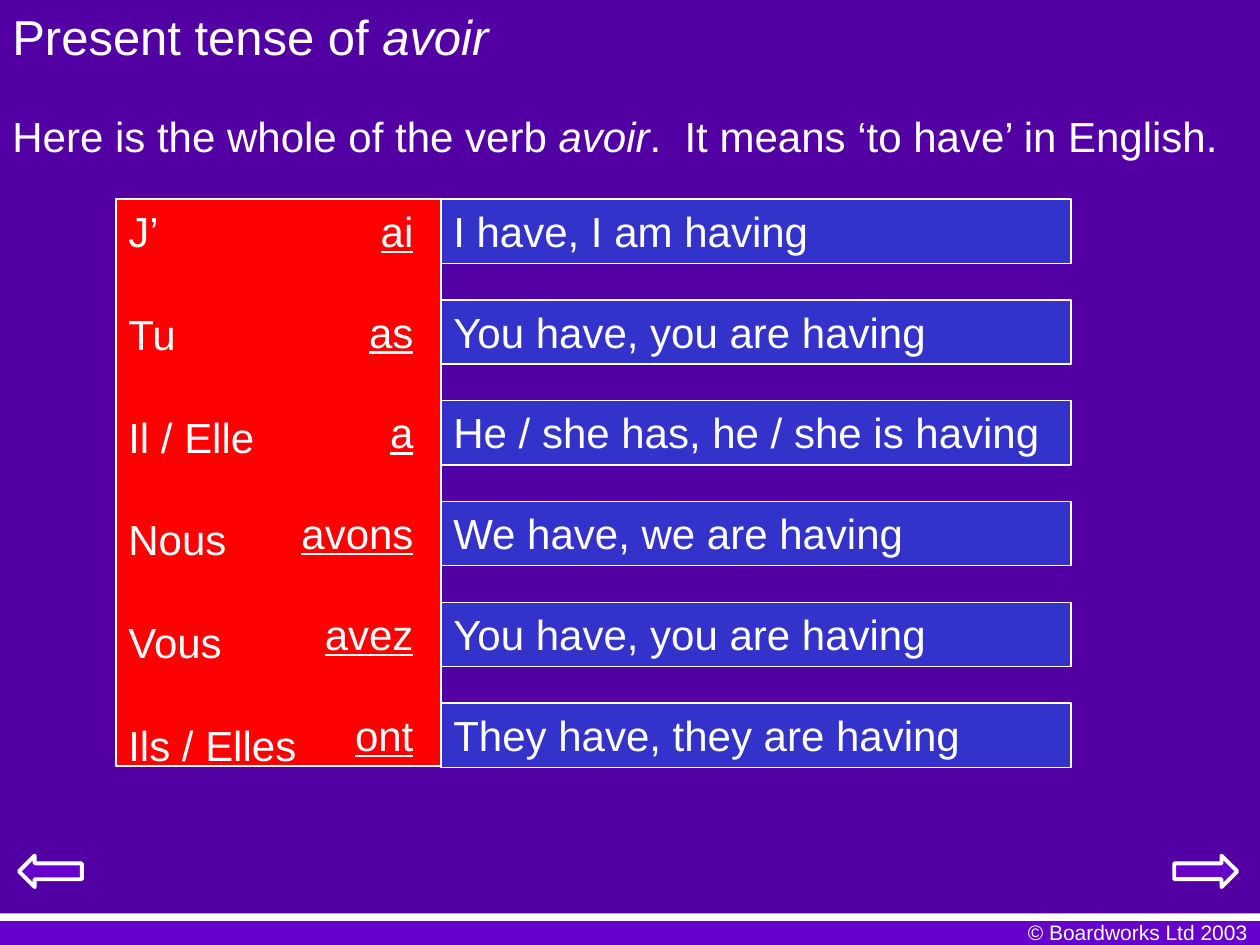
import pptx
import pptx.util
import pptx.dml.color
import pptx.enum.shapes
import pptx.enum.text

COLORS = {
    "background": "000066",
    "panel": "5200A4",
    "accent": "6600CC",
    "pronoun": "FF0000",
    "meaning": "3333CC",
    "white": "FFFFFF",
}
FONT = "Arial"
WIDTH, HEIGHT = 10, 7.5

# Grid of the verb table, in inches
TABLE_TOP, ROW_STEP, ROW_HEIGHT = 1.58, 0.8, 0.5
PRONOUN_LEFT, MEANING_LEFT, MEANING_RIGHT = 0.92, 3.5, 8.5
VERB_RIGHT = 3.38
TEXT_SIZE = 24
PRONOUN_GAP = 30  # points between pronoun lines, so they follow ROW_STEP

# Pronoun, verb form, width of the verb box, meaning
CONJUGATION = [
    ("J’", "ai", 0.46, "I have, I am having"),
    ("Tu", "as", 0.55, "You have, you are having"),
    ("Il / Elle", "a", 0.39, "He / she has, he / she is having"),
    ("Nous", "avons", 1.09, "We have, we are having"),
    ("Vous", "avez", 0.91, "You have, you are having"),
    ("Ils / Elles", "ont", 0.66, "They have, they are having"),
]

SHAPES = pptx.enum.shapes.MSO_SHAPE
ALIGN = pptx.enum.text.PP_ALIGN


def color(name):
    return pptx.dml.color.RGBColor.from_string(COLORS[name])


def inches(*lengths):
    return [pptx.util.Inches(length) for length in lengths]


def write_text(box, lines, size=TEXT_SIZE, align=ALIGN.LEFT, underline=None,
               gap=0, wrap=True):
    """Fill a box; each line is a list of (text, italic) spans."""
    frame = box.text_frame
    frame.word_wrap = wrap
    frame.vertical_anchor = pptx.enum.text.MSO_ANCHOR.TOP
    for index, spans in enumerate(lines):
        para = frame.add_paragraph() if index else frame.paragraphs[0]
        para.alignment = align
        if index and gap:
            para.space_before = pptx.util.Pt(gap)
        for text, italic in spans:
            span = para.add_run()
            span.text = text
            span.font.name = FONT
            span.font.size = pptx.util.Pt(size)
            span.font.italic = italic
            span.font.underline = underline
            span.font.color.rgb = color("white")


def add_text(page, left, top, width, height, spans, **text_format):
    box = page.shapes.add_textbox(*inches(left, top, width, height))
    write_text(box, [spans], **text_format)


def add_block(page, left, top, width, height, fill, outline=0,
              kind=SHAPES.RECTANGLE):
    block = page.shapes.add_shape(kind, *inches(left, top, width, height))
    block.shadow.inherit = False
    block.fill.solid()
    block.fill.fore_color.rgb = color(fill)
    if outline:
        block.line.color.rgb = color("white")
        block.line.width = pptx.util.Pt(outline)
    else:
        block.line.fill.background()
    return block


def add_frame(page):
    # Footer strip, copyright line, divider and main panel
    add_block(page, 0, 7.31, WIDTH, HEIGHT - 7.31, "accent")
    add_text(page, 7.67, 7.25, WIDTH - 7.67, 0.3,
             [("© Boardworks Ltd 2003", False)], size=12, align=ALIGN.RIGHT)
    add_block(page, 0, 0, WIDTH, 7.25, "panel")
    add_block(page, 0, 7.25, WIDTH, 0.06, "white")


def add_arrows(page):
    # Navigation arrows, back and forward
    for left, rotation in ((9.32, 0), (0.15, 180)):
        arrow = add_block(page, left, 6.79, 0.5, 0.25, "accent",
                          outline=2.25, kind=SHAPES.RIGHT_ARROW)
        arrow.rotation = rotation


def add_conjugation(page):
    # One panel holds all the pronouns
    panel = add_block(page, PRONOUN_LEFT, TABLE_TOP,
                      MEANING_LEFT - PRONOUN_LEFT,
                      ROW_STEP * (len(CONJUGATION) - 1) + ROW_HEIGHT,
                      "pronoun", outline=0.75)
    write_text(panel, [[(row[0], False)] for row in CONJUGATION],
               gap=PRONOUN_GAP)

    # Verb form and meaning on each row
    for index, (_, verb, verb_width, meaning) in enumerate(CONJUGATION):
        top = TABLE_TOP + index * ROW_STEP
        add_text(page, VERB_RIGHT - verb_width, top, verb_width, ROW_HEIGHT,
                 [(verb, False)], align=ALIGN.RIGHT, underline=True,
                 wrap=False)
        bar = add_block(page, MEANING_LEFT, top, MEANING_RIGHT - MEANING_LEFT,
                        ROW_HEIGHT + 0.01, "meaning", outline=0.75)
        write_text(bar, [[(meaning, False)]])


def main():
    deck = pptx.Presentation()
    deck.slide_width, deck.slide_height = inches(WIDTH, HEIGHT)
    page = deck.slides.add_slide(deck.slide_layouts[6])
    page.background.fill.solid()
    page.background.fill.fore_color.rgb = color("background")

    add_frame(page)
    add_arrows(page)
    # Title and introduction
    add_text(page, 0, 0, 3.99, 0.57,
             [("Present tense of ", False), ("avoir", True)],
             size=28, wrap=False)
    add_text(page, 0, 0.83, 9.78, 0.5,
             [("Here is the whole of the verb ", False), ("avoir", True),
              (".  It means ‘to have’ in English.", False)], wrap=False)
    add_conjugation(page)
    deck.save("out.pptx")


if __name__ == "__main__":
    main()
